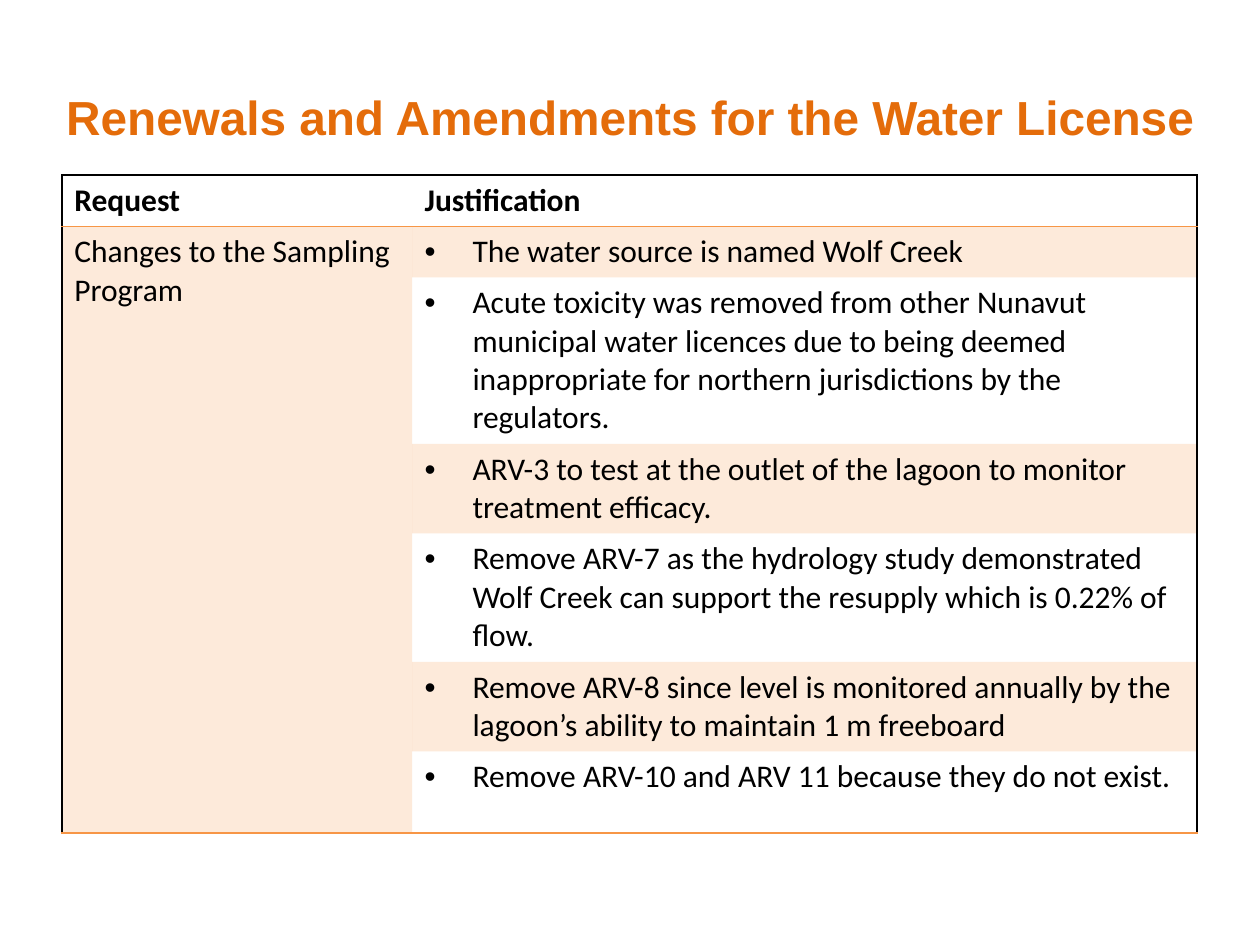
from dataclasses import dataclass
from typing import Optional

import pptx
import pptx.dml.color
import pptx.enum.text
import pptx.oxml.ns
import pptx.oxml.xmlchemy
import pptx.util

RGBColor = pptx.dml.color.RGBColor
Inches = pptx.util.Inches
Pt = pptx.util.Pt
qn = pptx.oxml.ns.qn
OxmlElement = pptx.oxml.xmlchemy.OxmlElement

TITLE_ORANGE = RGBColor(0xE4, 0x6C, 0x0A)
ACCENT = RGBColor(0xF7, 0x96, 0x46)
BLACK = RGBColor(0, 0, 0)

SLIDE_W, SLIDE_H = Inches(10), Inches(7.5)
TABLE_LEFT, TABLE_TOP = Inches(0.49), Inches(1.39)
COL_WIDTHS = (2.78, 6.23)
HEADER_HEIGHT = 0.4
INDENT = Inches(0.38)
SIDES = ("lnL", "lnR", "lnT", "lnB")

TITLE = "Renewals and Amendments for the Water License"
HEADINGS = ("Request", "Justification")
REQUEST = "Changes to the Sampling Program"


@dataclass(frozen=True)
class Justification:
    text: str
    height: float


JUSTIFICATIONS = (
    Justification("The water source is named Wolf Creek", 0.4),
    Justification("Acute toxicity was removed from other Nunavut municipal water "
                  "licences due to being deemed inappropriate for northern "
                  "jurisdictions by the regulators.", 1.32),
    Justification("ARV-3 to test at the outlet of the lagoon to monitor treatment "
                  "efficacy.", 0.71),
    Justification("Remove ARV-7 as the hydrology study demonstrated Wolf Creek can "
                  "support the resupply which is 0.22% of flow.", 1.02),
    Justification("Remove ARV-8 since level is monitored annually by the lagoon’s "
                  "ability to maintain 1 m freeboard", 0.71),
    Justification("Remove ARV-10 and ARV 11 because they do not exist.", 0.65),
)


def add_child(parent, tag: str, **attributes: str):
    child = OxmlElement(tag)
    for name, value in attributes.items():
        child.set(name, value)
    parent.append(child)
    return child


def set_borders(cell, colors: dict[str, RGBColor]) -> None:
    """Draw the given sides one point wide and clear the other sides."""
    tc_pr = cell._tc.get_or_add_tcPr()
    for index, side in enumerate(SIDES):
        line = OxmlElement(f"a:{side}")
        if side in colors:
            line.set("w", str(Pt(1)))
            solid = add_child(line, "a:solidFill")
            add_child(solid, "a:srgbClr", val=str(colors[side]))
        else:
            add_child(line, "a:noFill")
        tc_pr.insert(index, line)


def set_tint(cell, tinted: bool) -> None:
    if not tinted:
        cell.fill.background()
        return
    cell.fill.solid()
    cell.fill.fore_color.rgb = ACCENT
    color = cell._tc.tcPr.find(f".//{qn('a:srgbClr')}")
    add_child(color, "a:alpha", val="20000")


def set_text(cell, text: str, bold: bool = False, bullet: Optional[str] = None) -> None:
    cell.text_frame.text = text
    p = cell.text_frame.paragraphs[0]
    if bullet:
        p_pr = p._p.get_or_add_pPr()
        p_pr.set("marL", str(INDENT))
        p_pr.set("indent", str(-INDENT))
        add_child(p_pr, "a:buFont", typeface="Arial")
        add_child(p_pr, "a:buChar", char=bullet)
    font = p.runs[0].font
    font.name, font.size, font.bold = "Calibri", Pt(18), bold
    font.color.rgb = BLACK


def add_title(s) -> None:
    title = s.shapes.title
    title.left, title.top = 0, int(SLIDE_H * 0.04)
    title.width, title.height = SLIDE_W, Inches(1.25)
    tf = title.text_frame
    tf.text = TITLE
    tf.vertical_anchor = pptx.enum.text.MSO_ANCHOR.MIDDLE
    p = tf.paragraphs[0]
    p.alignment = pptx.enum.text.PP_ALIGN.CENTER
    font = p.runs[0].font
    font.name, font.size, font.bold = "Arial", Pt(27.3), True
    font.color.rgb = TITLE_ORANGE


def add_request_table(s) -> None:
    heights = [HEADER_HEIGHT] + [item.height for item in JUSTIFICATIONS]
    last = len(heights) - 1
    table = s.shapes.add_table(len(heights), len(COL_WIDTHS), TABLE_LEFT, TABLE_TOP,
                               Inches(sum(COL_WIDTHS)), Inches(sum(heights))).table
    for column, width in zip(table.columns, COL_WIDTHS):
        column.width = Inches(width)
    for row, height in zip(table.rows, heights):
        row.height = Inches(height)

    for row in range(len(heights)):
        for col, outer_side in enumerate(("lnL", "lnR")):
            cell = table.cell(row, col)
            set_tint(cell, row > 0 and (col == 0 or row % 2 == 1))
            borders = {outer_side: BLACK}
            if row == 0:
                borders["lnT"] = BLACK
            if row == 1:
                borders["lnT"] = ACCENT
            if row in (0, last) or (row == 1 and col == 0):
                borders["lnB"] = ACCENT
            set_borders(cell, borders)

    for col, heading in enumerate(HEADINGS):
        set_text(table.cell(0, col), heading, bold=True)
    table.cell(1, 0).merge(table.cell(last, 0))
    set_text(table.cell(1, 0), REQUEST)
    for row, item in enumerate(JUSTIFICATIONS, start=1):
        set_text(table.cell(row, 1), item.text, bullet="•")


def main() -> None:
    prs = pptx.Presentation()
    prs.slide_width, prs.slide_height = SLIDE_W, SLIDE_H
    s = prs.slides.add_slide(prs.slide_layouts[5])
    add_title(s)
    add_request_table(s)
    prs.save("out.pptx")


if __name__ == "__main__":
    main()
